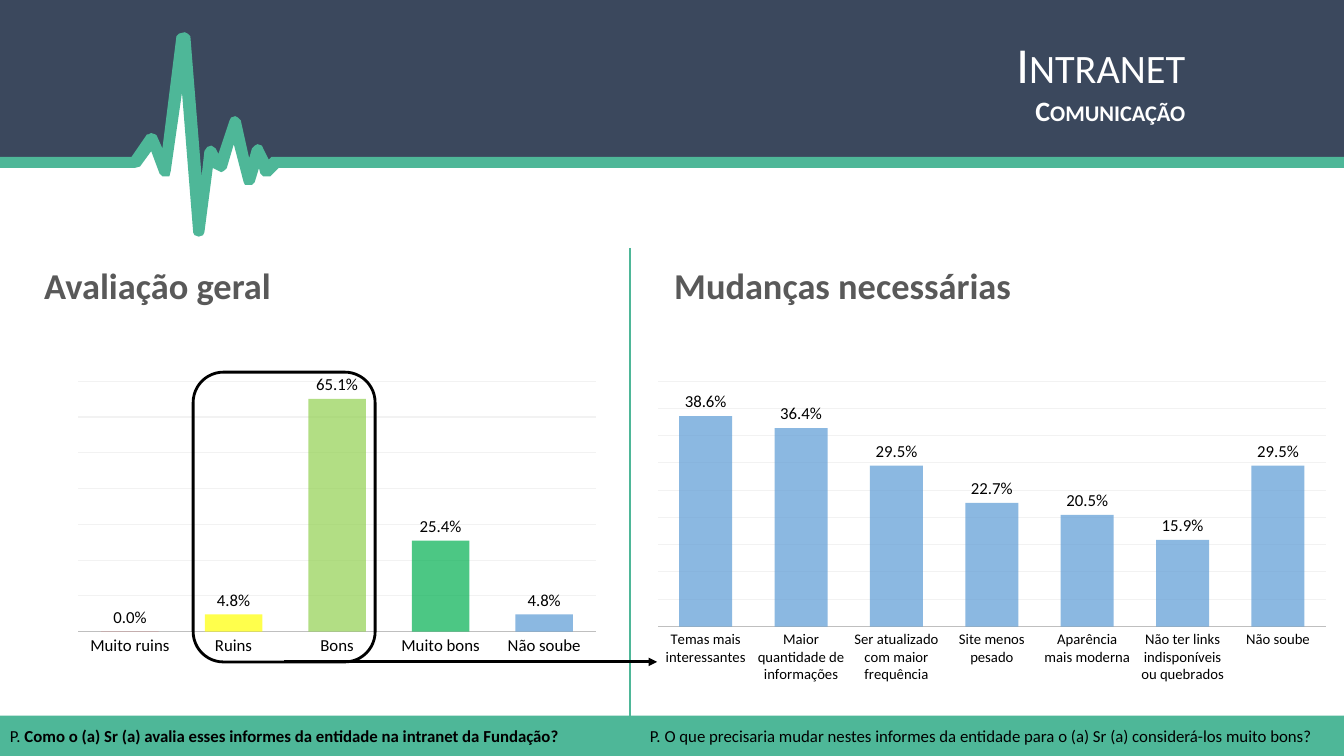
from dataclasses import dataclass, field

from lxml.etree import SubElement
from pptx import Presentation
from pptx.chart.data import CategoryChartData
from pptx.dml.color import RGBColor
from pptx.enum.chart import XL_CHART_TYPE, XL_LABEL_POSITION, XL_TICK_MARK
from pptx.enum.shapes import MSO_CONNECTOR, MSO_SHAPE
from pptx.enum.text import MSO_ANCHOR, MSO_AUTO_SIZE, PP_ALIGN
from pptx.oxml.ns import qn
from pptx.util import Pt

GREEN, NAVY, BLUE = "4EB798", "3B485D", "5B9BD5"
BLACK, WHITE, GREY = "000000", "FFFFFF", "595959"

BANNER = [
    (960, 0), (0, 0), (0, 116), (96.5, 115), (109.5, 101.5), (116.5, 120),
    (130.5, 53.5), (142, 147), (150, 111.5), (157, 119), (166.5, 90.5),
    (177, 126.5), (186, 110), (191, 121.5), (198, 115), (960, 116),
]
PULSE = [
    (960, 111.5), (196.5, 111.5), (193.5, 112.5), (192, 114.5), (188.5, 106),
    (187, 103.5), (184.5, 103), (182, 103.5), (180.5, 106), (178, 113),
    (171.5, 85.5), (170, 83.5), (167.5, 83), (165, 83.5), (163.5, 85.5),
    (155.5, 109.5), (154, 106.5), (151, 104.5), (148, 105), (146, 108),
    (143.5, 126.5), (135.5, 26.5), (134, 24), (132, 23), (128.5, 23.5),
    (126.5, 26), (116, 106), (112.5, 97), (111, 95.5), (108.5, 95),
    (106.5, 95.5), (105, 96.5), (94.5, 111.5), (0, 111.5), (0, 120),
    (96.5, 119.5), (99.5, 119), (107.5, 108), (114, 124), (116, 125.5),
    (119, 126), (121, 125.5), (121.5, 122.5), (130.5, 66), (137.5, 165.5),
    (139, 168), (142, 169), (145, 168), (146, 165.5), (152.5, 120),
    (155.5, 122.5), (158, 123), (160.5, 121.5), (161.5, 120), (167, 103),
    (173.5, 129.5), (175, 132), (177, 132.5), (180, 132), (181.5, 129.5),
    (185, 119.5), (186.5, 124), (188, 125.5), (190, 126), (193, 125.5),
    (199, 119.5), (960, 120),
]


@dataclass
class Caption:
    box: tuple
    runs: list
    size: float
    color: str


@dataclass
class Survey:
    box: tuple
    answers: dict
    axis_size: float
    maximum: float
    step: float
    point_colors: list = field(default_factory=list)


CAPTIONS = [
    Caption((0, 514.8, 469.4, 21.8), [
        ("P. ", False),
        ("Como o (a) Sr (a) avalia esses informes da entidade na intranet da Fundação?", True),
    ], 12, BLACK),
    Caption((457.2, 514.8, 502.6, 21.8), [
        ("P. O que precisaria mudar nestes informes da entidade para o (a) Sr (a) considerá-los muito bons?", False),
    ], 12, BLACK),
    Caption((24.5, 184.3, 432.7, 38.9), [("Avaliação geral", True)], 26, GREY),
    Caption((474.5, 184.3, 409, 38.9), [("Mudanças necessárias", True)], 26, GREY),
]

OVERALL = Survey((48.2, 267.8, 385.2, 204.5), {
    "Muito ruins": 0, "Ruins": 0.048, "Bons": 0.651,
    "Muito bons": 0.254, "Não soube": 0.048,
}, 12, 0.7, 0.1, ["FF0000", "FFFF00", "92D050", "00B050"])

CHANGES = Survey((460.1, 267.8, 496.8, 225.4), {
    "Temas mais interessantes": 0.386,
    "Maior quantidade de informações": 0.364,
    "Ser atualizado com maior frequência": 0.295,
    "Site menos pesado": 0.227,
    "Aparência mais moderna": 0.205,
    "Não ter links indisponíveis ou quebrados": 0.159,
    "Não soube": 0.295,
}, 10.5, 0.45, 0.05)


def assign(target, values: dict) -> None:
    for name, value in values.items():
        setattr(target, name, value)


def paint(target, color: str, opacity: int = 100) -> None:
    target.solid()
    target.fore_color.rgb = RGBColor.from_string(color)
    if opacity < 100:
        color_element = target._xPr.find(qn("a:solidFill"))[0]
        SubElement(color_element, qn("a:alpha"), val=str(opacity * 1000))


def format_font(font, size: float, color: str, bold: bool = False) -> None:
    assign(font, {"name": "Calibri", "size": Pt(size), "bold": bold})
    paint(font.fill, color)


def format_line(line, color: str, width: float) -> None:
    paint(line.fill, color)
    line.width = Pt(width)


def draw_outline(slide, points: list, color: str) -> None:
    builder = slide.shapes.build_freeform(*points[0], scale=Pt(1))
    builder.add_line_segments(points[1:], close=True)
    shape = builder.convert_to_shape()
    shape.shadow.inherit = False
    paint(shape.fill, color)
    shape.line.fill.background()


def draw_shape(slide, preset, box: tuple):
    shape = slide.shapes.add_shape(preset, *map(Pt, box))
    shape.shadow.inherit = False
    return shape


def draw_connector(slide, start: tuple, end: tuple, color: str, width: float):
    connector = slide.shapes.add_connector(
        MSO_CONNECTOR.STRAIGHT, *map(Pt, start + end))
    format_line(connector.line, color, width)
    SubElement(connector._element.spPr, qn("a:effectLst"))
    return connector


def draw_caption(slide, caption: Caption) -> None:
    frame = slide.shapes.add_textbox(*map(Pt, caption.box)).text_frame
    assign(frame, {"word_wrap": True, "auto_size": MSO_AUTO_SIZE.SHAPE_TO_FIT_TEXT})
    for text, bold in caption.runs:
        run = frame.paragraphs[0].add_run()
        run.text = text
        format_font(run.font, caption.size, caption.color, bold)


def draw_survey(slide, survey: Survey) -> None:
    data = CategoryChartData(number_format="0.0%")
    data.categories = list(survey.answers)
    data.add_series("Series 1", list(survey.answers.values()))
    chart = slide.shapes.add_chart(
        XL_CHART_TYPE.COLUMN_CLUSTERED, *map(Pt, survey.box), data).chart
    assign(chart, {"has_legend": False, "has_title": False})
    format_font(chart.font, 10, BLACK)

    category_axis = chart.category_axis
    category_axis.major_tick_mark = XL_TICK_MARK.NONE
    format_font(category_axis.tick_labels.font, survey.axis_size, BLACK)
    format_line(category_axis.format.line, "BFBFBF", 1.25)
    value_axis = chart.value_axis
    assign(value_axis, {
        "minimum_scale": 0, "maximum_scale": survey.maximum,
        "major_unit": survey.step, "has_major_gridlines": True, "visible": False,
    })
    format_line(value_axis.major_gridlines.format.line, "F2F2F2", 0.75)

    plot = chart.plots[0]
    assign(plot, {"gap_width": 80, "overlap": 25, "vary_by_categories": False,
                  "has_data_labels": True})
    assign(plot.data_labels, {
        "show_value": True, "number_format": "0.0%",
        "number_format_is_linked": False, "position": XL_LABEL_POSITION.OUTSIDE_END,
    })
    format_font(plot.data_labels.font, 12, BLACK)
    series = plot.series[0]
    series.invert_if_negative = False
    paint(series.format.fill, BLUE, 70)
    for index, color in enumerate(survey.point_colors):
        paint(series.points[index].format.fill, color, 70)


def draw_title(slide) -> None:
    title = slide.shapes.title
    assign(title, dict(zip(("left", "top", "width", "height"),
                           map(Pt, (177.1, 20.2, 676.8, 74.9)))))
    frame = title.text_frame
    assign(frame, {"word_wrap": True, "auto_size": MSO_AUTO_SIZE.NONE,
                   "vertical_anchor": MSO_ANCHOR.TOP})
    frame.text = "Intranet\nComunicação"
    for paragraph, size, bold in zip(frame.paragraphs, (36, 20), (False, True)):
        paragraph.alignment = PP_ALIGN.RIGHT
        run = paragraph.runs[0]
        format_font(run.font, size, WHITE, bold)
        run._r.get_or_add_rPr().set("cap", "small")
    slide.shapes._spTree.append(title._element)


def main() -> None:
    presentation = Presentation()
    assign(presentation, {"slide_width": Pt(960), "slide_height": Pt(540)})
    slide = presentation.slides.add_slide(presentation.slide_layouts[5])

    draw_outline(slide, BANNER, NAVY)
    draw_outline(slide, PULSE, GREEN)
    draw_survey(slide, OVERALL)
    footer = draw_shape(slide, MSO_SHAPE.RECTANGLE, (0, 511.2, 960, 28.8))
    paint(footer.fill, GREEN)
    footer.line.fill.background()
    for caption in CAPTIONS:
        draw_caption(slide, caption)

    draw_connector(slide, (450, 177.1), (450, 514.8), GREEN, 1)
    highlight = draw_shape(slide, MSO_SHAPE.ROUNDED_RECTANGLE, (138, 265.8, 130, 207))
    highlight.fill.background()
    format_line(highlight.line, BLACK, 2)
    arrow = draw_connector(slide, (203, 472.8), (469.4, 472.8), BLACK, 2)
    arrow.begin_connect(highlight, 2)
    SubElement(arrow.line._get_or_add_ln(), qn("a:tailEnd"), type="triangle")

    draw_title(slide)
    draw_survey(slide, CHANGES)
    presentation.save("out.pptx")


if __name__ == "__main__":
    main()
